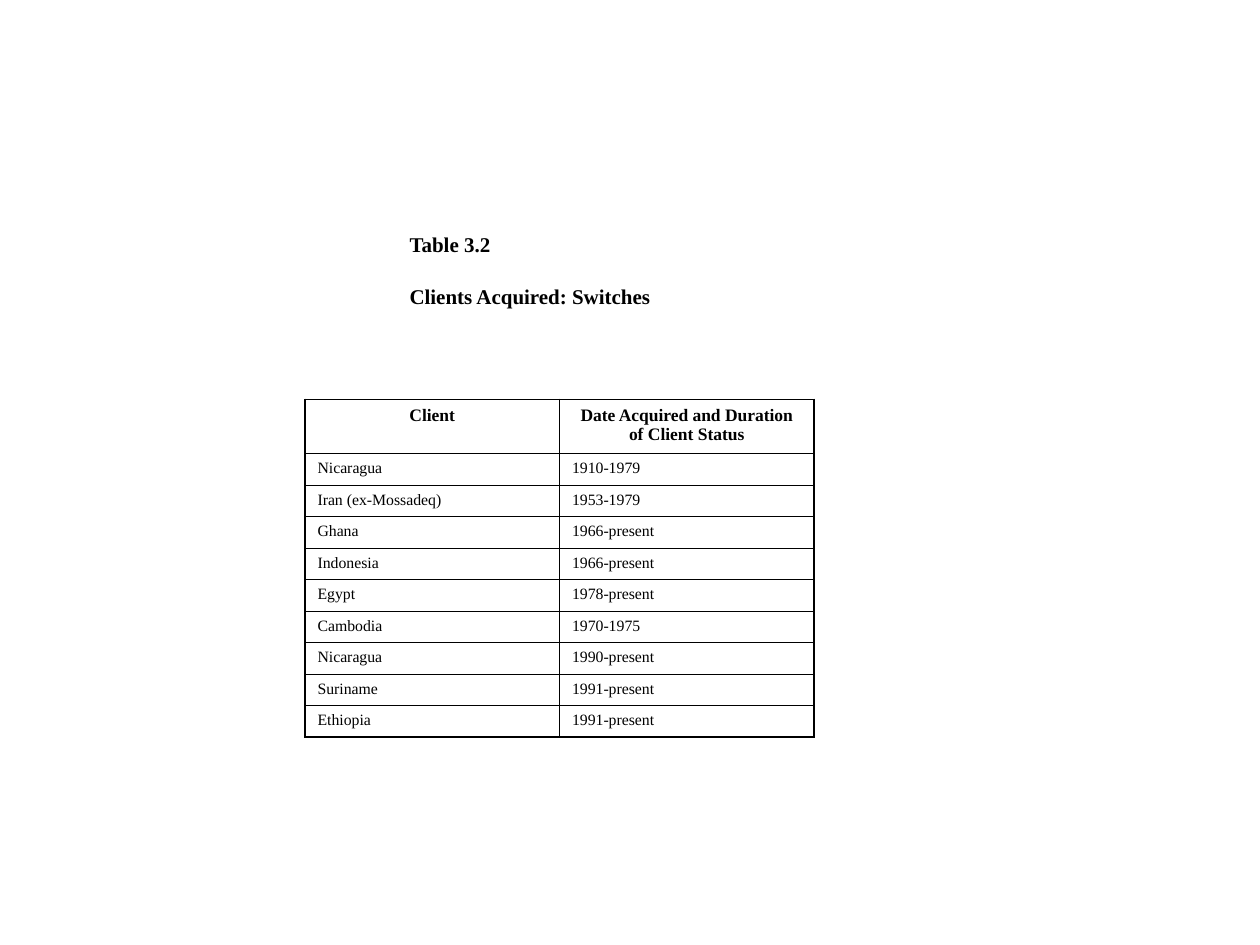
from dataclasses import dataclass

from lxml import etree
from pptx import Presentation
from pptx.dml.color import RGBColor
from pptx.enum.text import MSO_ANCHOR, MSO_AUTO_SIZE, PP_ALIGN
from pptx.oxml.ns import qn
from pptx.util import Inches, Pt

TOP, NO_FIT = MSO_ANCHOR.TOP, MSO_AUTO_SIZE.NONE
LEFT, CENTER = PP_ALIGN.LEFT, PP_ALIGN.CENTER
TITLE_ONLY = 5

TITLE = ["Table 3.2", "Clients Acquired: Switches"]
CLIENTS = [
    ("Client", "Date Acquired and Duration of Client Status"),
    ("Nicaragua", "1910-1979"),
    ("Iran (ex-Mossadeq)", "1953-1979"),
    ("Ghana", "1966-present"),
    ("Indonesia", "1966-present"),
    ("Egypt", "1978-present"),
    ("Cambodia", "1970-1975"),
    ("Nicaragua", "1990-present"),
    ("Suriname", "1991-present"),
    ("Ethiopia", "1991-present"),
]


@dataclass(frozen=True)
class Theme:
    font: str = "Times New Roman"
    ink: str = "000000"
    title_size: float = 12
    header_size: float = 10
    body_size: float = 9
    thick: float = 1
    thin: float = 0.75


class SlideBuilder:
    """Hold the theme and the current slide, and add styled elements to it."""

    def __init__(self, slide, theme):
        self.slide = slide
        self.theme = theme

    def style(self, p, size, bold, align=LEFT):
        p.alignment = align
        p.font.name = self.theme.font
        p.font.size = Pt(size)
        p.font.bold = bold
        p.font.color.rgb = RGBColor.from_string(self.theme.ink)

    def title(self, lines, x, y, w, h):
        sp = self.slide.shapes.title
        sp.left, sp.top, sp.width, sp.height = map(Inches, (x, y, w, h))
        tf = sp.text_frame
        tf.text = "\n".join(lines)
        tf.word_wrap = False
        tf.auto_size = NO_FIT
        tf.vertical_anchor = TOP
        tf.margin_left = tf.margin_right = 0
        tf.margin_top, tf.margin_bottom = Inches(0.17), Inches(0.04)
        for i, p in enumerate(tf.paragraphs):
            self.style(p, self.theme.title_size, True)
            p.space_before = Pt(15 if i else 0)

    def border(self, cell, side, width):
        tc_pr = cell._tc.get_or_add_tcPr()
        ln = etree.SubElement(tc_pr, qn(f"a:ln{side}"), w=str(Pt(width)))
        fill = etree.SubElement(ln, qn("a:solidFill"))
        etree.SubElement(fill, qn("a:srgbClr"), val=self.theme.ink)

    def table(self, rows, x, y, col_w, header_h, row_h):
        n_rows, n_cols = len(rows), len(rows[0])
        height = header_h + row_h * (n_rows - 1)
        frame = self.slide.shapes.add_table(
            n_rows, n_cols, Inches(x), Inches(y), Inches(col_w * n_cols), Inches(height))
        table = frame.table
        table.first_row = table.horz_banding = False
        for r, values in enumerate(rows):
            header = r == 0
            table.rows[r].height = Inches(header_h if header else row_h)
            for c, value in enumerate(values):
                cell = table.cell(r, c)
                cell.text = value
                size = self.theme.header_size if header else self.theme.body_size
                self.style(cell.text_frame.paragraphs[0], size, header,
                           CENTER if header else LEFT)
                heavy = {"L": c == 0, "R": c == n_cols - 1,
                         "T": r <= 1, "B": r in (0, n_rows - 1)}
                for side, is_heavy in heavy.items():
                    self.border(cell, side, self.theme.thick if is_heavy else self.theme.thin)
                cell.fill.background()


def main():
    prs = Presentation()
    prs.slide_width, prs.slide_height = Inches(10), Inches(7.5)
    s = SlideBuilder(prs.slides.add_slide(prs.slide_layouts[TITLE_ONLY]), Theme())
    s.title(TITLE, 3.25, 1.67, 1.93, 1.11)
    s.table(CLIENTS, 2.42, 3.17, col_w=2.02, header_h=0.43, row_h=0.25)
    prs.save("out.pptx")


if __name__ == "__main__":
    main()
